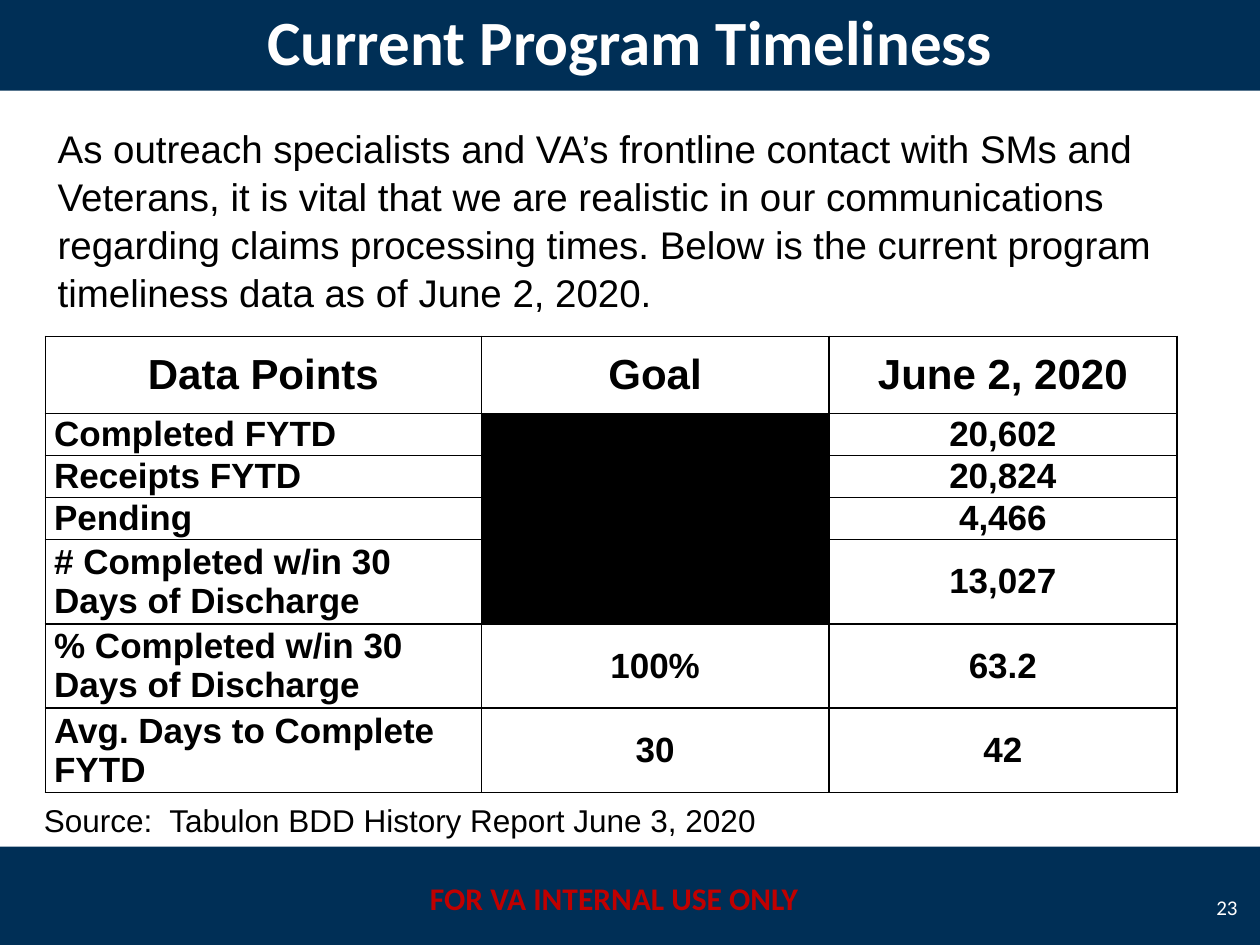
from lxml.etree import SubElement
from pptx import Presentation
from pptx.dml.color import RGBColor
from pptx.enum.shapes import MSO_SHAPE
from pptx.enum.text import MSO_ANCHOR, PP_ALIGN
from pptx.oxml import parse_xml
from pptx.oxml.ns import nsdecls, qn
from pptx.util import Inches, Pt

COLORS = {"navy": "002F56", "white": "FFFFFF", "black": "000000", "red": "C00000"}

INTRO = [
    "As outreach specialists and VA’s frontline contact with SMs and",
    "Veterans, it is vital that we are realistic in our communications "
    "regarding claims processing times. Below is the current program "
    "timeliness data as of June 2, 2020.",
]
# None marks a blacked-out cell
ROWS = [
    ("Data Points", "Goal", "June 2, 2020"),
    ("Completed FYTD", None, "20,602"),
    ("Receipts FYTD", None, "20,824"),
    ("Pending", None, "4,466"),
    ("# Completed w/in 30 Days of Discharge", None, "13,027"),
    ("% Completed w/in 30 Days of Discharge", "100%", "63.2"),
    ("Avg. Days to Complete FYTD", "30", "42"),
]
WIDTHS = [3.46, 2.76, 2.76]
HEIGHTS = [0.61] + [0.33] * 3 + [0.67] * 3


def color(name):
    return RGBColor.from_string(COLORS[name])


def inches(box):
    return [Inches(n) for n in box]


def write(frame, text, size=18, face="Arial", ink="black", bold=False,
          align=PP_ALIGN.LEFT, anchor=MSO_ANCHOR.TOP, spacing=None):
    """Fill a text frame with one line or a list of paragraphs."""
    frame.word_wrap = True
    frame.vertical_anchor = anchor
    lines = [text] if isinstance(text, str) else text
    for i, line in enumerate(lines):
        para = frame.paragraphs[0] if i == 0 else frame.add_paragraph()
        para.alignment = align
        para.line_spacing = spacing
        run = para.add_run()
        run.text = line
        font = run.font
        font.size, font.name, font.bold = Pt(size), face, bold
        font.color.rgb = color(ink)


def label(slide, box, text, **form):
    write(slide.shapes.add_textbox(*inches(box)).text_frame, text, **form)


def band(slide, box):
    bar = slide.shapes.add_shape(MSO_SHAPE.RECTANGLE, *inches(box))
    bar.shadow.inherit = False
    bar.fill.solid()
    bar.fill.fore_color.rgb = color("navy")
    bar.line.fill.background()


def header(slide, box):
    band(slide, box)
    title = slide.shapes.title
    title.left, title.top, title.width, title.height = inches(box)
    write(title.text_frame, "Current Program Timeliness", size=36, face="Calibri",
          ink="white", bold=True, align=PP_ALIGN.CENTER, anchor=MSO_ANCHOR.MIDDLE)
    # Bring the title in front of its band
    title.element.getparent().append(title.element)


def footer(slide, box):
    left, top, width, _ = box
    band(slide, box)
    label(slide, (left + 3.25, top + 0.21, 3.25, 0.4), "FOR VA INTERNAL USE ONLY",
          face="Calibri", ink="red", bold=True, align=PP_ALIGN.CENTER)
    label(slide, (left + width - 0.5, top + 0.28, 0.42, 0.4), "23", size=12,
          face="Calibri", ink="white", align=PP_ALIGN.RIGHT, anchor=MSO_ANCHOR.MIDDLE)


def border(cell):
    props = cell._tc.get_or_add_tcPr()
    for i, side in enumerate(("lnL", "lnR", "lnT", "lnB")):
        edge = parse_xml(f'<a:{side} {nsdecls("a")} w="{Pt(1)}"/>')
        fill = SubElement(edge, qn("a:solidFill"))
        SubElement(fill, qn("a:srgbClr"), val=COLORS["black"])
        props.insert(i, edge)


def grid(slide, box):
    frame = slide.shapes.add_table(len(ROWS), len(WIDTHS), *inches(box))
    table = frame.table
    table.first_row = table.horz_banding = False
    for col, width in zip(table.columns, WIDTHS):
        col.width = Inches(width)
    for r, (row, height) in enumerate(zip(ROWS, HEIGHTS)):
        table.rows[r].height = Inches(height)
        for c, text in enumerate(row):
            cell = table.cell(r, c)
            cell.margin_left = cell.margin_right = Inches(0.07)
            cell.margin_top = cell.margin_bottom = 0
            cell.fill.solid()
            cell.fill.fore_color.rgb = color("white" if text else "black")
            border(cell)
            if text:
                left = r > 0 and c == 0
                write(cell.text_frame, text, size=20 if r else 24, bold=True,
                      align=PP_ALIGN.LEFT if left else PP_ALIGN.CENTER)
                cell.vertical_anchor = MSO_ANCHOR.MIDDLE


def main():
    deck = Presentation()
    deck.slide_width, deck.slide_height = Inches(10), Inches(7.5)
    slide = deck.slides.add_slide(deck.slide_layouts[5])
    # Bands with title and footer
    footer(slide, (0, 6.72, 10, 0.8))
    header(slide, (0, -0.08, 10, 0.8))
    # Body
    label(slide, (0.36, 0.93, 9.5, 1.58), INTRO, size=22, spacing=1.04)
    grid(slide, (0.36, 2.67, sum(WIDTHS), sum(HEIGHTS)))
    label(slide, (0.25, 6.31, 6.25, 0.4),
          "Source:  Tabulon BDD History Report June 3, 2020")
    deck.save("out.pptx")


if __name__ == "__main__":
    main()
